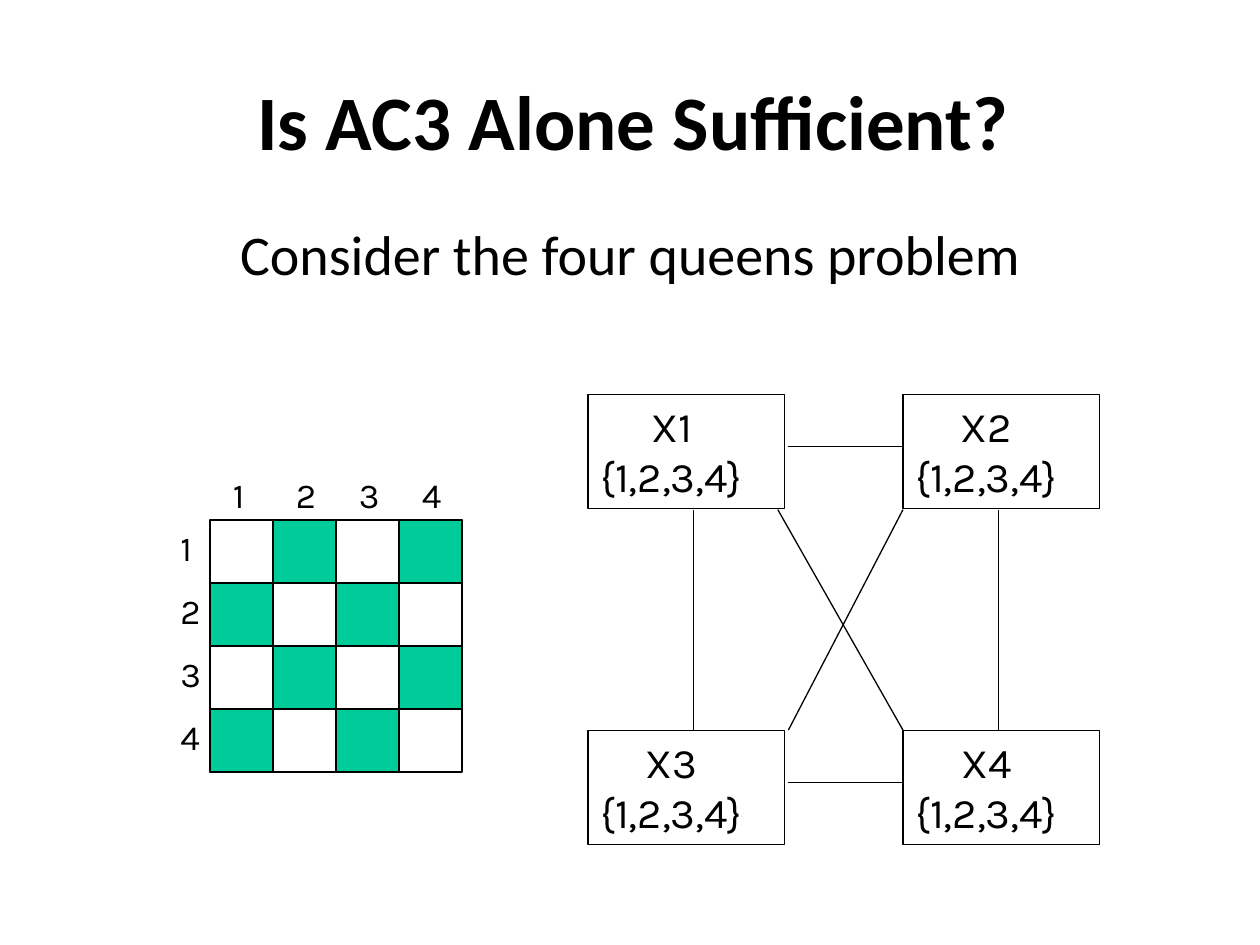
from dataclasses import dataclass

from lxml import etree
from pptx import Presentation
from pptx.dml.color import RGBColor
from pptx.enum.shapes import MSO_CONNECTOR, MSO_SHAPE
from pptx.enum.text import MSO_ANCHOR, MSO_AUTO_SIZE, PP_ALIGN
from pptx.oxml.ns import qn
from pptx.util import Pt

RECTANGLE = MSO_SHAPE.RECTANGLE
STRAIGHT = MSO_CONNECTOR.STRAIGHT
TOP, MIDDLE = MSO_ANCHOR.TOP, MSO_ANCHOR.MIDDLE
LEFT, CENTER = PP_ALIGN.LEFT, PP_ALIGN.CENTER
NO_AUTOFIT = MSO_AUTO_SIZE.NONE

COLORS = {"ink": "000000", "queen_square": "00CC99"}
LINE_WIDTH = 0.75
BOARD_LEFT, BOARD_TOP, SQUARE, BOARD_SIZE = 120, 297.25, 36, 4
LABEL_WIDTH, LABEL_HEIGHT = 25, 31
DOMAIN = "{1,2,3,4}"


@dataclass(frozen=True)
class Area:
    left: float
    top: float
    width: float
    height: float

    def lengths(self) -> list:
        return [Pt(value) for value in (self.left, self.top, self.width, self.height)]


@dataclass(frozen=True)
class Variable:
    name: str
    left: float
    top: float


@dataclass(frozen=True)
class Constraint:
    start_x: float
    start_y: float
    end_x: float
    end_y: float

    def lengths(self) -> list:
        return [Pt(value) for value in (self.start_x, self.start_y, self.end_x, self.end_y)]


LEFT_COLUMN, RIGHT_COLUMN = 336, 516
UPPER_ROW, LOWER_ROW = 225.25, 417.25
UPPER_EDGE, NEAR_EDGE = 291.25, 450.5

VARIABLES = [
    Variable("X1", LEFT_COLUMN, UPPER_ROW),
    Variable("X2", RIGHT_COLUMN, UPPER_ROW),
    Variable("X3", LEFT_COLUMN, LOWER_ROW),
    Variable("X4", RIGHT_COLUMN, LOWER_ROW),
]
CONSTRAINTS = [
    Constraint(NEAR_EDGE, UPPER_ROW + 30, RIGHT_COLUMN, UPPER_ROW + 30),
    Constraint(NEAR_EDGE, LOWER_ROW + 30, RIGHT_COLUMN, LOWER_ROW + 30),
    Constraint(396.5, UPPER_EDGE, 396.5, LOWER_ROW),
    Constraint(570.5, UPPER_EDGE, 570.5, LOWER_ROW),
    Constraint(444.5, UPPER_EDGE, RIGHT_COLUMN, LOWER_ROW),
    Constraint(RIGHT_COLUMN, UPPER_EDGE, NEAR_EDGE, LOWER_ROW),
]


def apply(target, formats: dict) -> None:
    for name, value in formats.items():
        setattr(target, name, value)


def color(name: str) -> RGBColor:
    return RGBColor.from_string(COLORS[name])


def write(frame, lines: list[str], font: dict, align=LEFT, **frame_formats) -> None:
    apply(frame, {"auto_size": NO_AUTOFIT, "word_wrap": True,
                  "vertical_anchor": TOP, **frame_formats})
    for index, line in enumerate(lines):
        para = frame.paragraphs[0] if index == 0 else frame.add_paragraph()
        apply(para, {"alignment": align, "space_before": Pt(0)})
        span = para.add_run()
        span.text = line
        apply(span.font, font)
        span.font.color.rgb = color("ink")


def place(shape, area: Area) -> None:
    apply(shape, dict(zip(("left", "top", "width", "height"), area.lengths())))


def outline(shape) -> None:
    shape.line.color.rgb = color("ink")
    shape.line.width = Pt(LINE_WIDTH)


def draw_rectangle(page, area: Area, fill: str | None = None):
    box = page.shapes.add_shape(RECTANGLE, *area.lengths())
    box.shadow.inherit = False
    if fill:
        box.fill.solid()
        box.fill.fore_color.rgb = color(fill)
    else:
        box.fill.background()
    outline(box)
    return box


def draw_constraint(page, constraint: Constraint) -> None:
    line = page.shapes.add_connector(STRAIGHT, *constraint.lengths())
    outline(line)
    etree.SubElement(line._element.spPr, qn("a:effectLst"))


def draw_label(page, text: str, left: float, top: float) -> None:
    box = page.shapes.add_textbox(*Area(left, top, LABEL_WIDTH, LABEL_HEIGHT).lengths())
    write(box.text_frame, [text], {"name": "Karla", "size": Pt(20)})


def draw_board(page) -> None:
    side = BOARD_SIZE * SQUARE
    draw_rectangle(page, Area(BOARD_LEFT, BOARD_TOP, side, side))
    for row in range(BOARD_SIZE):
        for column in range(BOARD_SIZE):
            if (row + column) % 2:
                draw_rectangle(page, Area(BOARD_LEFT + column * SQUARE,
                                          BOARD_TOP + row * SQUARE,
                                          SQUARE, SQUARE), "queen_square")
    for index in range(BOARD_SIZE):
        number, offset = str(index + 1), index * SQUARE
        draw_label(page, number, BOARD_LEFT - LABEL_WIDTH + 1, BOARD_TOP + offset)
        draw_label(page, number, BOARD_LEFT + 6 + offset, BOARD_TOP - LABEL_HEIGHT + 0.75)


def draw_variable(page, variable: Variable) -> None:
    box = draw_rectangle(page, Area(variable.left, variable.top, 112.5, 65.5))
    write(box.text_frame, [variable.name, DOMAIN],
          {"name": "Karla", "size": Pt(24)}, CENTER,
          margin_left=Pt(4), margin_right=Pt(21))


def draw_constraint_graph(page) -> None:
    for variable in VARIABLES:
        draw_variable(page, variable)
    for constraint in CONSTRAINTS:
        draw_constraint(page, constraint)


def fill_placeholders(page) -> None:
    title, body = page.shapes.title, page.placeholders[1]
    place(title, Area(55.75, 23.5, 612, 90))
    write(title.text_frame, ["Is AC3 Alone Sufficient?"],
          {"name": "Calibri", "size": Pt(44), "bold": True}, CENTER,
          vertical_anchor=MIDDLE)
    place(body, Area(130.5, 122, 465, 46))
    write(body.text_frame, ["Consider the four queens problem"],
          {"name": "Calibri", "size": Pt(32)}, CENTER,
          margin_left=Pt(4), margin_right=Pt(9.5))
    properties = body.text_frame.paragraphs[0]._p.get_or_add_pPr()
    properties.set("marL", "0")
    properties.set("indent", "0")
    etree.SubElement(properties, qn("a:buNone"))


def main() -> None:
    deck = Presentation()
    apply(deck, {"slide_width": Pt(720), "slide_height": Pt(540)})
    page = deck.slides.add_slide(deck.slide_layouts[1])
    fill_placeholders(page)
    draw_board(page)
    draw_constraint_graph(page)
    deck.save("out.pptx")


if __name__ == "__main__":
    main()
